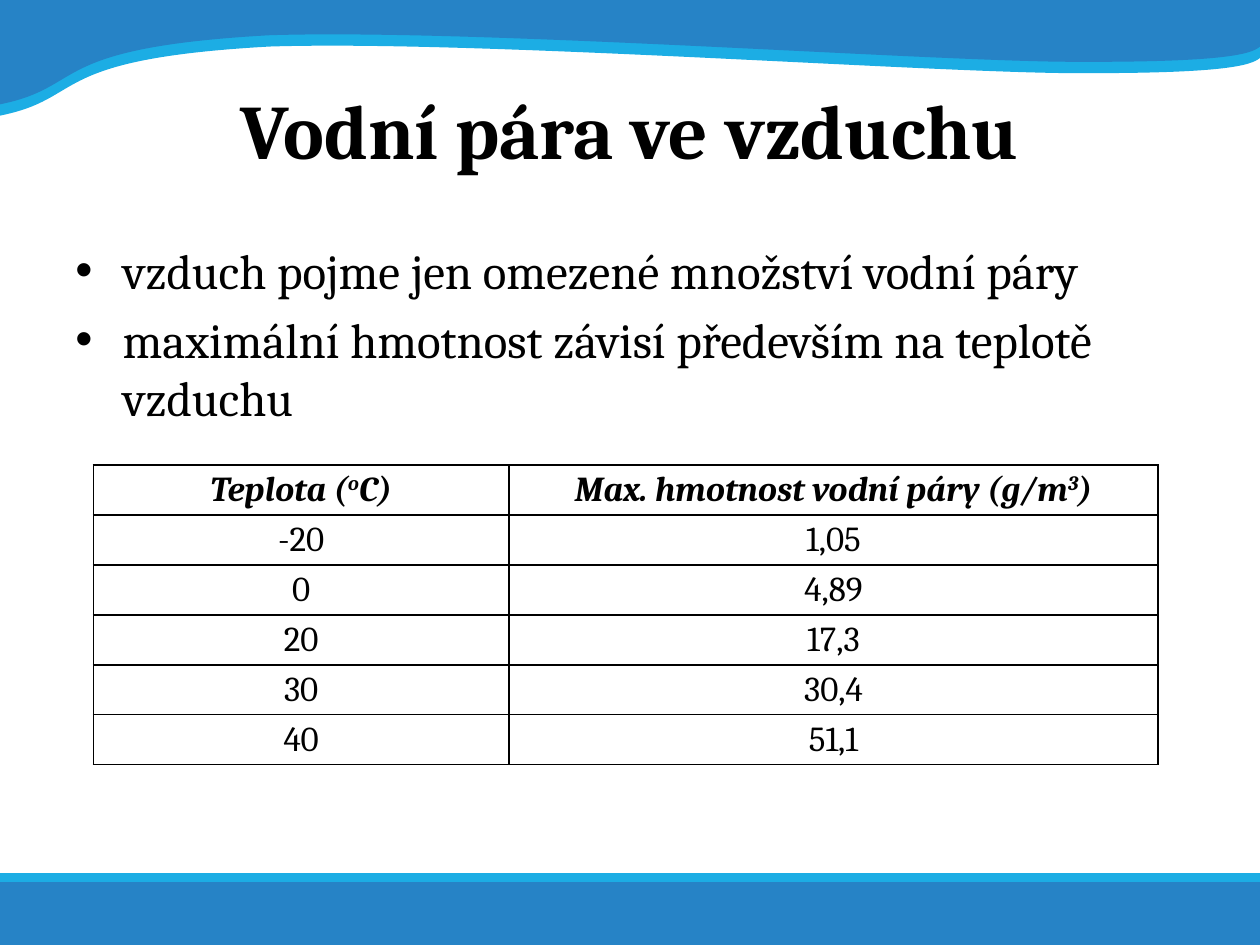
from lxml import etree
from pptx import Presentation
from pptx import util as u
from pptx.dml.color import RGBColor
from pptx.enum import shapes, text
from pptx.oxml import ns

FONT = "Cambria"
BLACK, WHITE, BLUE, CYAN = "000000", "FFFFFF", "2683C6", "1CADE4"
WAVE_TOP = [(0, -0.01), (10, 0)]
WAVE_CURVES = [
    [(10, 0.12), (10, 0.25), (10, 0.37)],
    [(9.93, 0.43), (9.72, 0.5), (8.41, 0.49)],
    [(7.1, 0.47), (3.73, 0.23), (2.14, 0.28)],
    [(0.34, 0.38), (0.7, 0.69), (-0.01, 0.83)],
]
BULLETS = [
    "vzduch pojme jen omezené množství vodní páry",
    "maximální hmotnost závisí především na teplotě vzduchu",
]
HEADERS = [("Teplota (", "o", "C)"), ("Max. hmotnost vodní páry (g/m", "3", ")")]
VALUES = [("-20", "1,05"), ("0", "4,89"), ("20", "17,3"), ("30", "30,4"), ("40", "51,1")]


def paint(fill, color):
    """Give a fill one solid colour."""
    fill.solid()
    fill.fore_color.rgb = RGBColor.from_string(color)


def add_span(para, content, size=20, bold=False, italic=False, raised=False):
    """Add a formatted run to a paragraph."""
    span = para.add_run()
    span.text = content
    font = span.font
    font.name, font.size, font.bold, font.italic = FONT, u.Pt(size), bold, italic
    font.color.rgb = RGBColor.from_string(BLACK)
    if raised:
        span._r.get_or_add_rPr().set("baseline", "30000")


def finish_shape(shape, color):
    """Leave a shape with a plain fill, no line and no shadow."""
    shape.shadow.inherit = False
    paint(shape.fill, color)
    shape.line.fill.background()


def bend_segments(shape, straight):
    """Turn the segments after the straight ones into cubic curves."""
    segments = list(shape._element.iter(ns.qn("a:lnTo")))[straight:]
    for start in range(0, len(segments) - len(segments) % 3, 3):
        group = segments[start:start + 3]
        curve = etree.Element(ns.qn("a:cubicBezTo"))
        group[0].addprevious(curve)
        for segment in group:
            curve.append(segment[0])
            segment.getparent().remove(segment)


def add_wave(page, drop, color):
    """Draw the top wave, lowered by the given distance."""
    points = WAVE_TOP + [point for curve in WAVE_CURVES for point in curve]
    points = [(u.Inches(x), u.Inches(y + drop)) for x, y in points]
    builder = page.shapes.build_freeform(*points[0], scale=1.0)
    builder.add_line_segments(points[1:], close=True)
    wave = builder.convert_to_shape()
    bend_segments(wave, len(WAVE_TOP) - 1)
    finish_shape(wave, color)


def add_band(page, top, height, color):
    """Draw a full-width band."""
    band = page.shapes.add_shape(
        shapes.MSO_SHAPE.RECTANGLE, 0, u.Inches(top), u.Inches(10), u.Inches(height))
    finish_shape(band, color)


def set_title(page, content):
    """Place and format the title."""
    title = page.shapes.title
    title.left, title.top = u.Inches(0.5), u.Inches(0.3)
    title.width, title.height = u.Inches(9), u.Inches(1.45)
    title.text_frame.vertical_anchor = text.MSO_ANCHOR.MIDDLE
    para = title.text_frame.paragraphs[0]
    para.alignment = text.PP_ALIGN.CENTER
    add_span(para, content, size=44, bold=True)


def add_bullets(page, items):
    """Add the bulleted text."""
    box = page.shapes.add_textbox(u.Inches(0.5), u.Inches(1.86), u.Inches(9), u.Inches(4.84))
    frame = box.text_frame
    frame.word_wrap = True
    for index, item in enumerate(items):
        para = frame.add_paragraph() if index else frame.paragraphs[0]
        props = para._p.get_or_add_pPr()
        props.set("marL", str(u.Pt(27)))
        props.set("indent", str(-u.Pt(27)))
        etree.SubElement(props, ns.qn("a:buFont"), typeface="Arial")
        etree.SubElement(props, ns.qn("a:buChar"), char="•")
        if index:
            para.space_before = u.Pt(5.6)
        add_span(para, item, size=28)


def add_borders(cell):
    """Give a cell thin black borders on all sides."""
    props = cell._tc.get_or_add_tcPr()
    for index, side in enumerate(("lnL", "lnR", "lnT", "lnB")):
        line = etree.Element(ns.qn(f"a:{side}"), w=str(u.Pt(1)))
        fill = etree.SubElement(line, ns.qn("a:solidFill"))
        etree.SubElement(fill, ns.qn("a:srgbClr"), val=BLACK)
        props.insert(index, line)


def fill_cell(cell, parts, header):
    """Write a cell whose second part, if any, is raised."""
    paint(cell.fill, WHITE)
    add_borders(cell)
    cell.vertical_anchor = text.MSO_ANCHOR.MIDDLE
    cell.margin_left = cell.margin_right = u.Inches(0.08)
    cell.margin_top = cell.margin_bottom = u.Inches(0.03)
    para = cell.text_frame.paragraphs[0]
    para.alignment = text.PP_ALIGN.CENTER
    for index, part in enumerate(parts):
        add_span(para, part, bold=header, italic=header, raised=index == 1)


def add_vapour_table(page):
    """Add the table of temperature and vapour mass."""
    rows = [HEADERS] + [[(value,) for value in row] for row in VALUES]
    table = page.shapes.add_table(
        len(rows), 2, u.Inches(0.74), u.Inches(3.69), u.Inches(8.45), u.Inches(2.38)).table
    table.horz_banding = False
    for column, width in zip(table.columns, (3.3, 5.15)):
        column.width = u.Inches(width)
    for row_index, row in enumerate(rows):
        for column_index, parts in enumerate(row):
            fill_cell(table.cell(row_index, column_index), parts, row_index == 0)


def main():
    """Build and save the slide."""
    deck = Presentation()
    deck.slide_width, deck.slide_height = u.Inches(10), u.Inches(7.5)
    page = deck.slides.add_slide(deck.slide_layouts[5])
    add_wave(page, 0.09, CYAN)
    add_wave(page, 0, BLUE)
    add_band(page, 7, 0.5, BLUE)
    add_band(page, 6.93, 0.07, CYAN)
    set_title(page, "Vodní pára ve vzduchu")
    add_bullets(page, BULLETS)
    add_vapour_table(page)
    deck.save("out.pptx")


if __name__ == "__main__":
    main()
